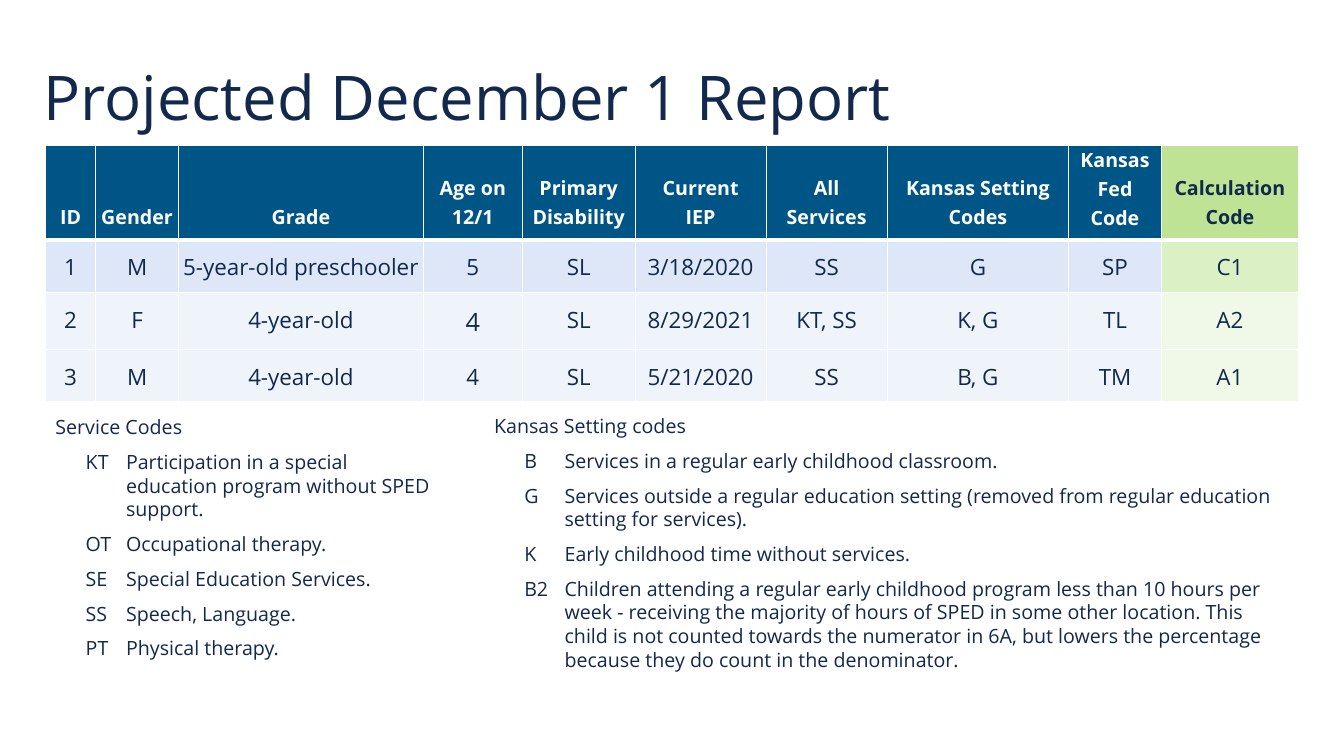
from dataclasses import dataclass

from lxml import etree
from pptx import Presentation
from pptx.dml.color import RGBColor
from pptx.enum.text import MSO_ANCHOR, MSO_AUTO_SIZE, PP_ALIGN
from pptx.oxml.ns import qn
from pptx.slide import Slide
from pptx.table import _Cell
from pptx.text.text import _Paragraph
from pptx.util import Inches, Pt

LEFT, CENTER = PP_ALIGN.LEFT, PP_ALIGN.CENTER
TOP, MIDDLE, BOTTOM = MSO_ANCHOR.TOP, MSO_ANCHOR.MIDDLE, MSO_ANCHOR.BOTTOM
GROW, NO_FIT = MSO_AUTO_SIZE.SHAPE_TO_FIT_TEXT, MSO_AUTO_SIZE.NONE

NAVY = RGBColor(0x12, 0x28, 0x4C)
BLUE = RGBColor(0x00, 0x55, 0x87)
GREEN = RGBColor(0xBE, 0xE3, 0x95)
WHITE = RGBColor(0xFF, 0xFF, 0xFF)
FONT = "Open Sans"
TWO_CONTENT_LAYOUT = 3


@dataclass(frozen=True)
class ReportRow:
    values: tuple[str, ...]
    height: float
    fill: RGBColor
    code_fill: RGBColor  # fill of the calculation code column


@dataclass(frozen=True)
class CodeList:
    heading: str
    codes: tuple[tuple[str, str], ...]
    left: float
    top: float
    width: float
    height: float


COLUMN_WIDTHS = (0.5, 0.82, 2.43, 0.98, 1.12, 1.3, 1.2, 1.8, 0.92, 1.36)
TIGHT_COLUMNS = (1, 2)
LARGE_AGE = (2, 3)  # row and column of the one 18 pt value
PALE_BLUE, PALE_GREEN = RGBColor(0xEF, 0xF4, 0xFB), RGBColor(0xF0, 0xF9, 0xE7)

REPORT = (
    ReportRow(("ID", "Gender", "Grade", "Age on 12/1", "Primary Disability",
               "Current IEP", "All Services", "Kansas Setting Codes",
               "Kansas Fed Code", "Calculation Code"), 0.94, BLUE, GREEN),
    ReportRow(("1", "M", "5-year-old preschooler", "5", "SL", "3/18/2020",
               "SS", "G", "SP", "C1"), 0.52,
              RGBColor(0xDD, 0xE7, 0xF7), RGBColor(0xDC, 0xF0, 0xC6)),
    ReportRow(("2", "F", "4-year-old", "4", "SL", "8/29/2021",
               "KT, SS", "K, G", "TL", "A2"), 0.57, PALE_BLUE, PALE_GREEN),
    ReportRow(("3", "M", "4-year-old", "4", "SL", "5/21/2020",
               "SS", "B, G", "TM", "A1"), 0.52, PALE_BLUE, PALE_GREEN),
)

SERVICE_CODES = CodeList("Service Codes", (
    ("KT", "Participation in a special education program without SPED support."),
    ("OT", "Occupational therapy."),
    ("SE", "Special Education Services."),
    ("SS", "Speech, Language."),
    ("PT", "Physical therapy."),
), 0.45, 4.07, 4.04, 2.31)

SETTING_CODES = CodeList("Kansas Setting codes", (
    ("B", "Services in a regular early childhood classroom."),
    ("G", "Services outside a regular education setting "
          "(removed from regular education setting for services)."),
    ("K", "Early childhood time without services."),
    ("B2", "Children attending a regular early childhood program less than "
           "10 hours per week - receiving the majority of hours of SPED in some "
           "other location. This child is not counted towards the numerator in "
           "6A, but lowers the percentage because they do count in the "
           "denominator."),
), 4.8, 4.06, 8.09, 3.06)


def add_text(paragraph: _Paragraph, text: str, size: float,
             color: RGBColor = NAVY, bold: bool = False) -> None:
    run = paragraph.add_run()
    run.text = text
    run.font.name = FONT
    run.font.size = Pt(size)
    run.font.bold = bold
    run.font.color.rgb = color


def place(shape, left: float, top: float, width: float, height: float) -> None:
    shape.left, shape.top = Inches(left), Inches(top)
    shape.width, shape.height = Inches(width), Inches(height)


def set_borders(cell: _Cell, top: float, bottom: float) -> None:
    properties = cell._tc.get_or_add_tcPr()
    sides = (("a:lnL", 1), ("a:lnR", 1), ("a:lnT", top), ("a:lnB", bottom))
    for position, (tag, width) in enumerate(sides):
        line = etree.Element(qn(tag), w=str(Pt(width)))
        fill = etree.SubElement(line, qn("a:solidFill"))
        etree.SubElement(fill, qn("a:srgbClr"), val=str(WHITE))
        properties.insert(position, line)


def add_title(slide: Slide, text: str) -> None:
    title = slide.shapes.title
    place(title, 0.33, 0.4, 12.09, 1.2)
    frame = title.text_frame
    frame.auto_size = NO_FIT
    frame.vertical_anchor = MIDDLE
    paragraph = frame.paragraphs[0]
    paragraph.alignment = LEFT
    paragraph.line_spacing = 0.9
    add_text(paragraph, text, 44)


def fill_cell(cell: _Cell, row: int, column: int) -> None:
    record = REPORT[row]
    is_header = row == 0
    is_code = column == len(COLUMN_WIDTHS) - 1
    cell.fill.solid()
    cell.fill.fore_color.rgb = record.code_fill if is_code else record.fill
    cell.margin_left = cell.margin_right = Inches(
        0.01 if column in TIGHT_COLUMNS else 0.1)
    cell.margin_top = Inches(0 if is_header else 0.1)
    cell.margin_bottom = Inches(0.1)
    cell.vertical_anchor = BOTTOM if is_header else TOP
    set_borders(cell, 3 if row == 1 else 1, 3 if is_header else 1)

    paragraph = cell.text_frame.paragraphs[0]
    paragraph.alignment = CENTER
    paragraph.line_spacing = 1.07
    size = 14 if is_header else 18 if (row, column) == LARGE_AGE else 16
    color = WHITE if is_header and not is_code else NAVY
    add_text(paragraph, record.values[column], size, color, is_header)


def add_report(slide: Slide) -> None:
    table = slide.shapes.add_table(
        len(REPORT), len(COLUMN_WIDTHS), Inches(0.45), Inches(1.44),
        Inches(sum(COLUMN_WIDTHS)), Inches(sum(r.height for r in REPORT))).table
    table.horz_banding = False
    for column, width in enumerate(COLUMN_WIDTHS):
        table.columns[column].width = Inches(width)
    for row, record in enumerate(REPORT):
        table.rows[row].height = Inches(record.height)
        for column in range(len(COLUMN_WIDTHS)):
            fill_cell(table.cell(row, column), row, column)


def format_list_line(paragraph: _Paragraph, indent: float, hanging: float,
                     before: float) -> None:
    properties = paragraph._p.get_or_add_pPr()
    properties.set("marL", str(Inches(indent)))
    properties.set("indent", str(Inches(-hanging)))
    etree.SubElement(properties, qn("a:buNone"))
    paragraph.alignment = LEFT
    paragraph.line_spacing = 1.0
    paragraph.space_before = Pt(before)
    paragraph.space_after = Pt(6)


def fill_code_list(placeholder, codes: CodeList) -> None:
    place(placeholder, codes.left, codes.top, codes.width, codes.height)
    frame = placeholder.text_frame
    frame.word_wrap = True
    frame.auto_size = GROW
    frame.vertical_anchor = TOP
    heading = frame.paragraphs[0]
    format_list_line(heading, 0, 0, 0)
    add_text(heading, codes.heading, 14)
    for code, meaning in codes.codes:
        entry = frame.add_paragraph()
        format_list_line(entry, 0.7, 0.4, 2)
        add_text(entry, f"{code}\t{meaning}", 14)


def main() -> None:
    deck = Presentation()
    deck.slide_width, deck.slide_height = Inches(13.33), Inches(7.5)
    slide = deck.slides.add_slide(deck.slide_layouts[TWO_CONTENT_LAYOUT])

    # Title and report table
    add_title(slide, "Projected December 1 Report")
    add_report(slide)

    # Code keys below the table
    fill_code_list(slide.placeholders[1], SERVICE_CODES)
    fill_code_list(slide.placeholders[2], SETTING_CODES)

    deck.save("out.pptx")


if __name__ == "__main__":
    main()
